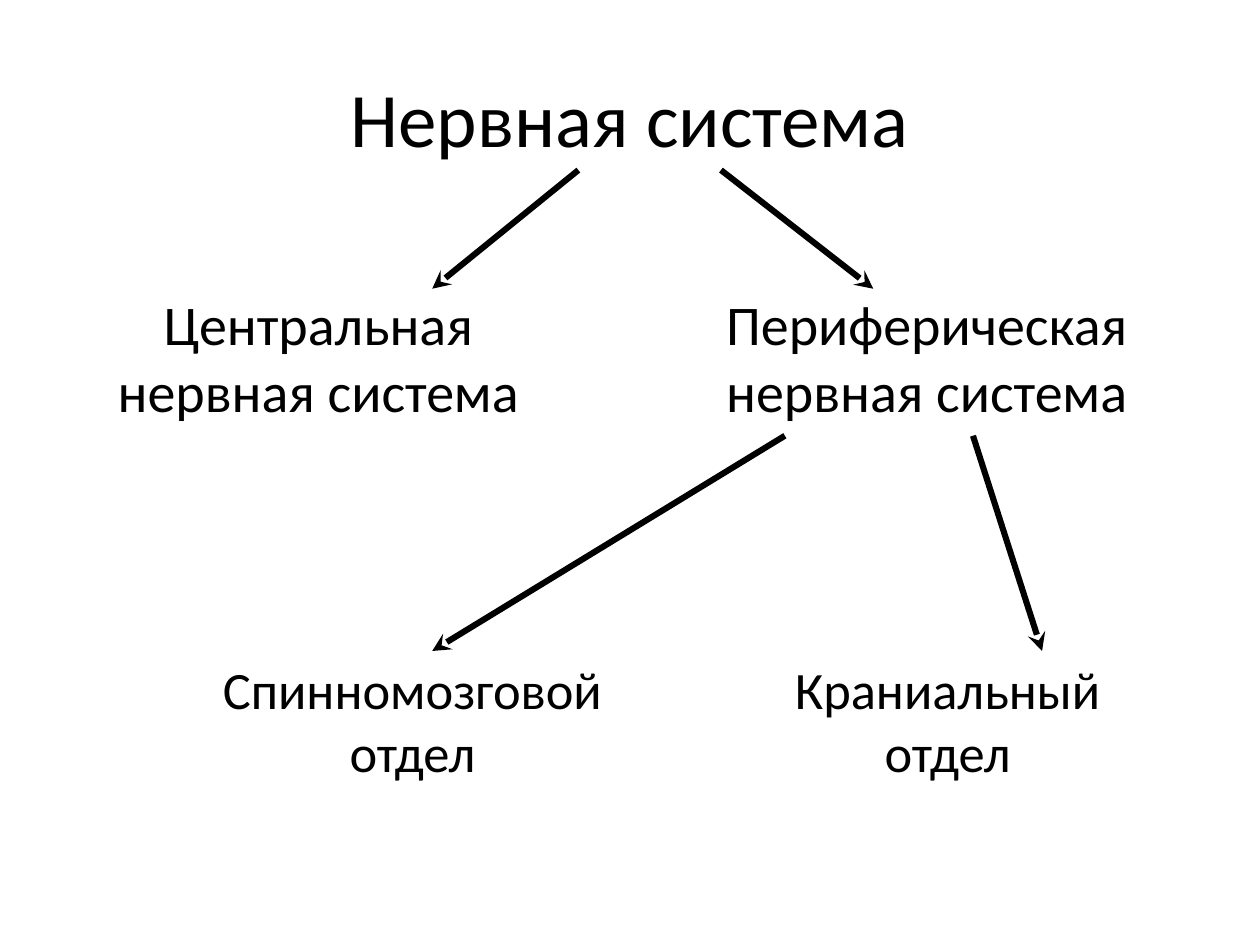
"""Build a slide showing the divisions of the nervous system as a tree."""
from dataclasses import dataclass

from lxml import etree
from pptx import Presentation
from pptx.dml.color import RGBColor
from pptx.enum import shapes, text
from pptx.oxml import ns
from pptx.util import Pt


@dataclass(frozen=True)
class Theme:
    font: str = "Calibri"
    ink: RGBColor = RGBColor(0, 0, 0)
    paper: RGBColor = RGBColor(255, 255, 255)
    title: int = 44
    system: int = 32
    division: int = 30
    line: float = 3.5


theme = Theme()


def write(tf, words, size, anchor):
    tf.text = words
    tf.word_wrap = True
    tf.vertical_anchor = anchor
    p = tf.paragraphs[0]
    p.alignment = text.PP_ALIGN.CENTER
    r = p.runs[0]
    r.font.name = theme.font
    r.font.size = Pt(size)
    r.font.color.rgb = theme.ink


prs = Presentation()
prs.slide_width, prs.slide_height = Pt(720), Pt(540)
s = prs.slides.add_slide(prs.slide_layouts[5])
s.background.fill.solid()
s.background.fill.fore_color.rgb = theme.paper

title = s.shapes.title
title.left, title.top, title.width, title.height = Pt(36), Pt(21.6), Pt(648), Pt(90)
write(title.text_frame, "Нервная система", theme.title, text.MSO_ANCHOR.MIDDLE)

system_top, division_top = 162, 372
labels = [
    ("Центральная нервная система", 60, system_top, 244, 85, theme.system),
    ("Периферическая нервная система", 399.5, system_top, 260.5, 85, theme.system),
    ("Спинномозговой отдел", 119.5, division_top, 232.5, 80, theme.division),
    ("Краниальный отдел", 445, division_top, 193, 80, theme.division),
]
for words, left, top, width, height, size in labels:
    sp = s.shapes.add_textbox(Pt(left), Pt(top), Pt(width), Pt(height))
    write(sp.text_frame, words, size, text.MSO_ANCHOR.TOP)
    sp.text_frame.auto_size = text.MSO_AUTO_SIZE.SHAPE_TO_FIT_TEXT

levels = [
    (97.2, 165, [(330.5, 247), (412, 499)]),
    (249, division_top, [(448.5, 247), (556, 595.5)]),
]
for start, end, arrows in levels:
    for x1, x2 in arrows:
        arrow = s.shapes.add_connector(
            shapes.MSO_CONNECTOR.STRAIGHT, Pt(x1), Pt(start), Pt(x2), Pt(end))
        arrow.line.color.rgb = theme.ink
        arrow.line.width = Pt(theme.line)
        etree.SubElement(arrow.line._get_or_add_ln(), ns.qn("a:tailEnd"), type="stealth")
        etree.SubElement(arrow._element.spPr, ns.qn("a:effectLst"))

prs.save("out.pptx")
